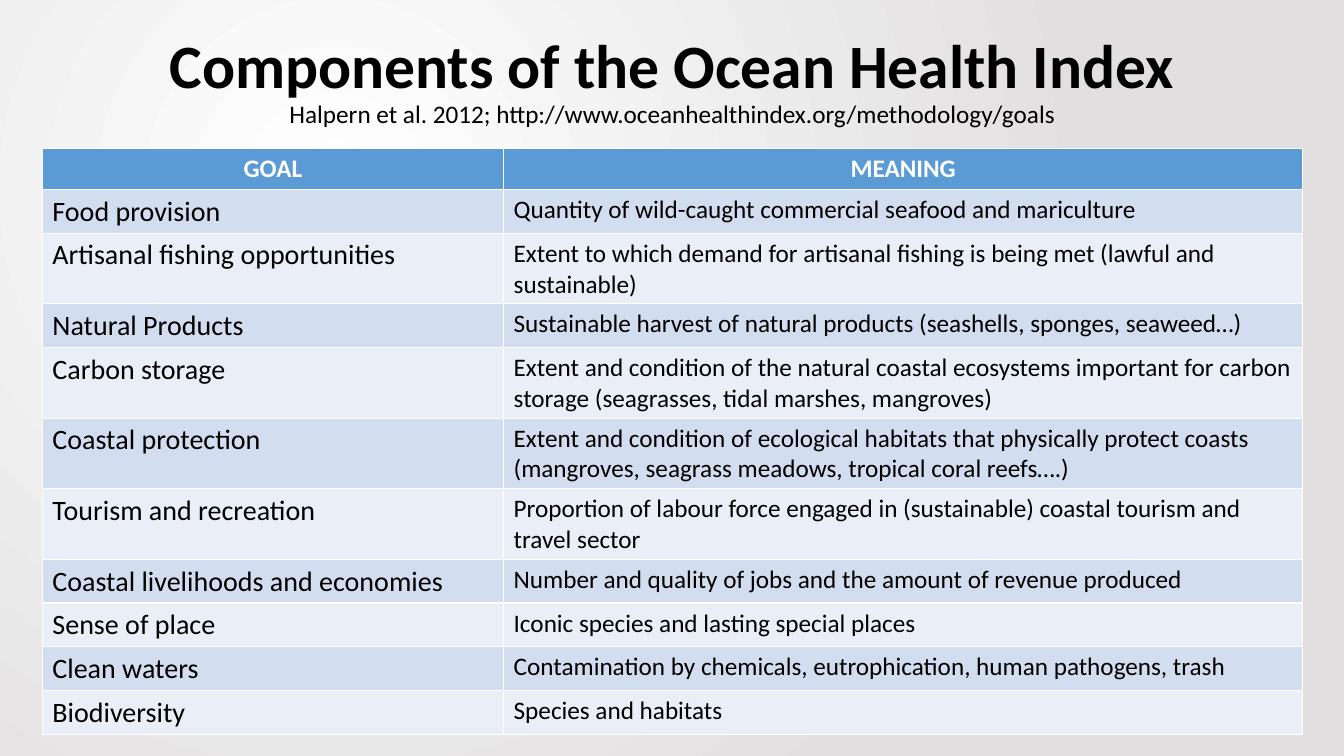
from lxml import etree
from pptx import Presentation
from pptx import util as u
from pptx.dml.color import RGBColor
from pptx.enum import text
from pptx.oxml.ns import qn

COLORS = {
    "ink": "000000",
    "header": "5B9BD5",
    "header_ink": "FFFFFF",
    "odd_band": "D2DEEF",
    "even_band": "EAEFF7",
    "glow": "FFFFFF",
    "edge": "E1DFDF",
}
FONT = "Calibri"
SLIDE_WIDTH, SLIDE_HEIGHT = u.Inches(13.33), u.Inches(7.5)
GOAL_SHARE = 0.366
ROW_HEIGHT = u.Inches(0.41)

HEADINGS = ("GOAL", "MEANING")
GOALS = [
    ("Food provision", "Quantity of wild-caught commercial seafood and mariculture"),
    ("Artisanal fishing opportunities",
     "Extent to which demand for artisanal fishing is being met (lawful and sustainable)"),
    ("Natural Products",
     "Sustainable harvest of natural products (seashells, sponges, seaweed…)"),
    ("Carbon storage",
     "Extent and condition of the natural coastal ecosystems important for carbon storage "
     "(seagrasses, tidal marshes, mangroves)"),
    ("Coastal protection",
     "Extent and condition of ecological habitats that physically protect coasts "
     "(mangroves, seagrass meadows, tropical coral reefs….)"),
    ("Tourism and recreation",
     "Proportion of labour force engaged in (sustainable) coastal tourism and travel sector"),
    ("Coastal livelihoods and economies",
     "Number and quality of jobs and the amount of revenue produced"),
    ("Sense of place", "Iconic species and lasting special places"),
    ("Clean waters", "Contamination by chemicals, eutrophication, human pathogens, trash"),
    ("Biodiversity", "Species and habitats"),
]


def rgb(name):
    return RGBColor.from_string(COLORS[name])


def style_run(run, size, color="ink", bold=False):
    run.font.name = FONT
    run.font.size = u.Pt(size)
    run.font.bold = bold
    run.font.color.rgb = rgb(color)


def paint_background(slide):
    fill = slide.background.fill
    fill.gradient()
    for stop, name in zip(fill.gradient_stops, ("glow", "edge")):
        stop.color.rgb = rgb(name)
    gradient = next(slide.element.iter(qn("a:gradFill")))
    gradient.remove(gradient.find(qn("a:lin")))
    glow = etree.SubElement(gradient, qn("a:path"), path="circle")
    etree.SubElement(glow, qn("a:fillToRect"), l="50000", t="50000", r="100000", b="100000")


def add_heading(slide, left, top, width, height):
    frame = slide.shapes.add_textbox(left, top, width, height).text_frame
    frame.word_wrap = True
    frame.vertical_anchor = text.MSO_ANCHOR.MIDDLE
    heading = frame.paragraphs[0]
    heading.text = ("Components of the Ocean Health Index\v"
                    "Halpern et al. 2012; http://www.oceanhealthindex.org/methodology/goals")
    heading.alignment = text.PP_ALIGN.CENTER
    heading.line_spacing = 0.9
    title, citation = heading.runs
    style_run(title, 44, bold=True)
    style_run(citation, 18)


def fill_cell(cell, wording, fill, size, color="ink", bold=False, align=None):
    cell.fill.solid()
    cell.fill.fore_color.rgb = rgb(fill)
    cell.text_frame.text = wording
    paragraph = cell.text_frame.paragraphs[0]
    paragraph.alignment = align
    style_run(paragraph.runs[0], size, color, bold)


def add_goal_table(slide, left, top, width):
    row_count = len(GOALS) + 1
    table = slide.shapes.add_table(
        row_count, len(HEADINGS), left, top, width, ROW_HEIGHT * row_count).table
    goal_width = int(width * GOAL_SHARE)
    table.columns[0].width = goal_width
    table.columns[1].width = width - goal_width
    for column, wording in enumerate(HEADINGS):
        fill_cell(table.cell(0, column), wording, "header", 18, "header_ink", True,
                  text.PP_ALIGN.CENTER)
    for row, (goal, meaning) in enumerate(GOALS, start=1):
        band = "odd_band" if row % 2 else "even_band"
        fill_cell(table.cell(row, 0), goal, band, 20)
        fill_cell(table.cell(row, 1), meaning, band, 18)


def main():
    deck = Presentation()
    deck.slide_width, deck.slide_height = SLIDE_WIDTH, SLIDE_HEIGHT
    slide = deck.slides.add_slide(deck.slide_layouts[6])
    paint_background(slide)
    add_heading(slide, u.Inches(0.92), u.Inches(0.15), u.Inches(11.5), u.Inches(1.32))
    add_goal_table(slide, u.Inches(0.42), u.Inches(1.47), u.Inches(12.5))
    deck.save("out.pptx")


if __name__ == "__main__":
    main()
